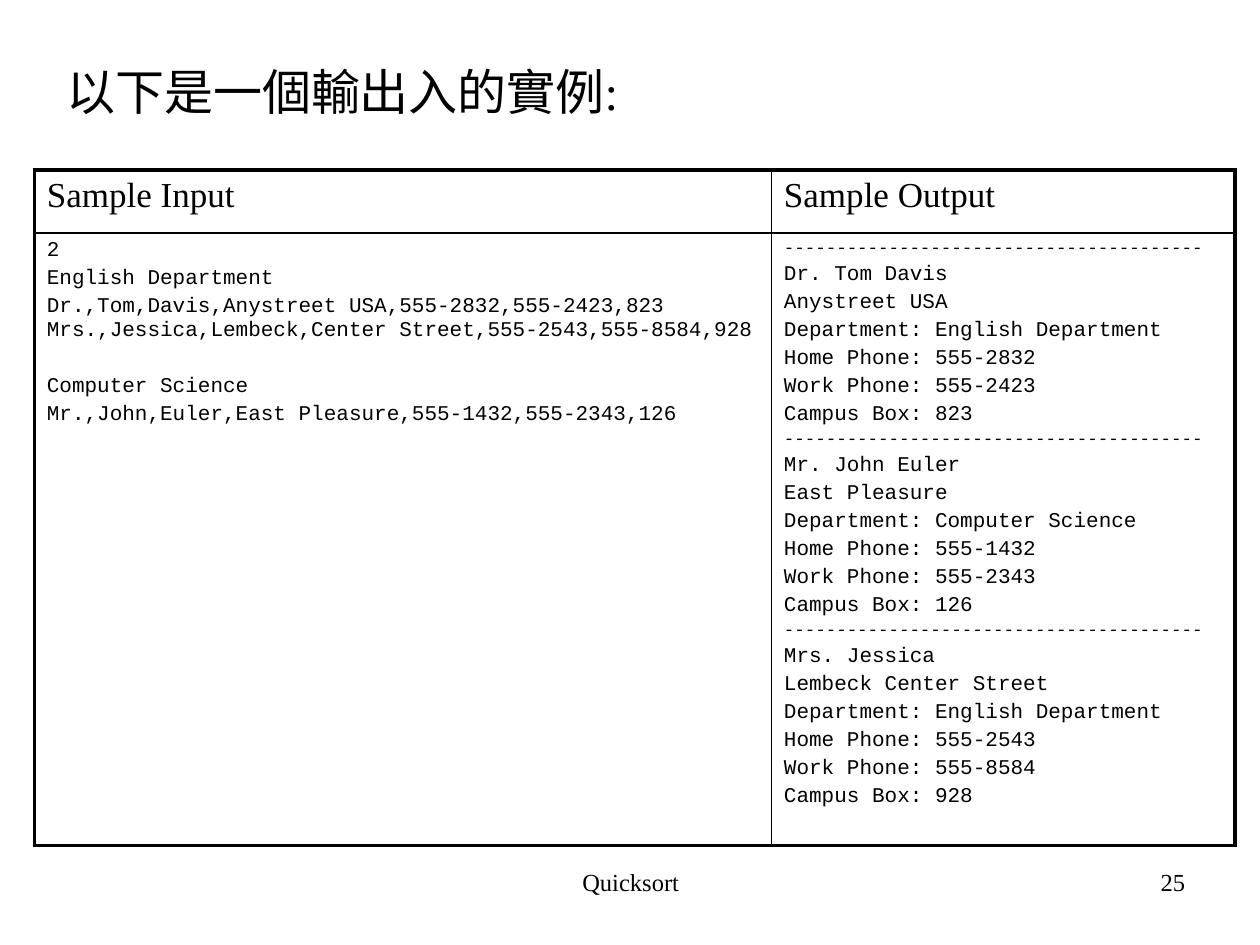
from typing import NamedTuple

from pptx import Presentation
from pptx.dml.color import RGBColor
from pptx.enum.text import MSO_ANCHOR as Anchor, PP_ALIGN as Align
from pptx.oxml import parse_xml
from pptx.oxml.ns import nsdecls
from pptx.util import Cm, Pt

COLORS = {"ink": "000000", "paper": "FFFFFF"}
SERIF, MONO = "Times New Roman", "Courier New"
THIN, THICK = 1, 2.25
SPACE_RATIO = 0.2
RULE = "-" * 40
COLUMN_WIDTHS = (14.86, 9.35)
ROW_HEIGHTS = (1.27, 12.22)


class Line(NamedTuple):
    text: str
    size: float = 12
    font: str = MONO
    align: Align = Align.LEFT
    hanging: float = 0
    extra_space: float = 0


class Box(NamedTuple):
    left: float
    top: float
    width: float
    height: float
    line: Line


class Person(NamedTuple):
    name: str
    address: str
    department: str
    home: str
    work: str
    campus_box: int


BOXES = (
    Box(8.69, 17.35, 8.05, 1.32, Line("Quicksort", 14, SERIF, Align.CENTER)),
    Box(18.21, 17.35, 5.93, 1.32, Line("25", 14, SERIF, Align.RIGHT)),
    Box(1.09, 1.12, 22.86, 12.57, Line("以下是一個輸出入的實例:", 28, SERIF, hanging=0.97)),
)
PEOPLE = (
    Person("Dr. Tom Davis", "Anystreet USA", "English Department", "555-2832", "555-2423", 823),
    Person("Mr. John Euler", "East Pleasure", "Computer Science", "555-1432", "555-2343", 126),
    Person("Mrs. Jessica", "Lembeck Center Street", "English Department", "555-2543", "555-8584", 928),
)
SAMPLE_INPUT = [
    Line("2"),
    Line("English Department"),
    Line("Dr.,Tom,Davis,Anystreet USA,555-2832,555-2423,823 "
         "Mrs.,Jessica,Lembeck,Center Street,555-2543,555-8584,928"),
    Line("Computer Science", extra_space=16),
    Line("Mr.,John,Euler,East Pleasure,555-1432,555-2343,126"),
]


def output_lines(person: Person) -> list[Line]:
    """Return the printed directory entry of one person."""
    details = (
        person.name,
        person.address,
        f"Department: {person.department}",
        f"Home Phone: {person.home}",
        f"Work Phone: {person.work}",
        f"Campus Box: {person.campus_box}",
    )
    return [Line(RULE, 10)] + [Line(detail) for detail in details]


def set_all(target, values: dict) -> None:
    """Set every attribute named in values on target."""
    for name, value in values.items():
        setattr(target, name, value)


def write_lines(text_frame, lines: list[Line]) -> None:
    """Write one paragraph per line, spaced in proportion to its size."""
    for index, line in enumerate(lines):
        paragraph = text_frame.add_paragraph() if index else text_frame.paragraphs[0]
        paragraph.alignment = line.align
        if index:
            paragraph.space_before = Pt(line.size * SPACE_RATIO + line.extra_space)
        if line.hanging:
            properties = paragraph._p.get_or_add_pPr()
            properties.set("marL", str(Cm(line.hanging)))
            properties.set("indent", str(-Cm(line.hanging)))
        run = paragraph.add_run()
        run.text = line.text
        set_all(run.font, {"name": line.font, "size": Pt(line.size), "bold": False})
        run.font.color.rgb = RGBColor.from_string(COLORS["ink"])


def add_box(slide, box: Box) -> None:
    """Add a wrapped text box."""
    shape = slide.shapes.add_textbox(*map(Cm, box[:4]))
    set_all(shape.text_frame, {"word_wrap": True, "vertical_anchor": Anchor.TOP})
    write_lines(shape.text_frame, [box.line])


def set_borders(cell, widths: dict[str, float]) -> None:
    """Draw solid borders of the given point widths around a cell."""
    properties = cell._tc.get_or_add_tcPr()
    for side, width in widths.items():
        properties.append(parse_xml(
            f'<a:ln{side} {nsdecls("a")} w="{Pt(width)}"><a:solidFill>'
            f'<a:srgbClr val="{COLORS["ink"]}"/></a:solidFill></a:ln{side}>'))


def add_sample_table(slide, rows: list[list[list[Line]]]) -> None:
    """Add the table with a thick frame and thin inner lines."""
    row_count, column_count = len(ROW_HEIGHTS), len(COLUMN_WIDTHS)
    table = slide.shapes.add_table(
        row_count, column_count, Cm(0.69), Cm(3.43),
        Cm(sum(COLUMN_WIDTHS)), Cm(sum(ROW_HEIGHTS))).table
    set_all(table, {"first_row": False, "horz_banding": False})
    for column, width in zip(table.columns, COLUMN_WIDTHS):
        column.width = Cm(width)
    for row, height in zip(table.rows, ROW_HEIGHTS):
        row.height = Cm(height)
    for row_index, row in enumerate(rows):
        for column_index, lines in enumerate(row):
            cell = table.cell(row_index, column_index)
            outer = {
                "L": column_index == 0,
                "R": column_index == column_count - 1,
                "T": row_index == 0,
                "B": row_index == row_count - 1,
            }
            set_borders(cell, {side: THICK if edge else THIN for side, edge in outer.items()})
            cell.fill.solid()
            cell.fill.fore_color.rgb = RGBColor.from_string(COLORS["paper"])
            cell.vertical_anchor = Anchor.TOP
            write_lines(cell.text_frame, lines)


def main() -> None:
    """Build and save the presentation."""
    presentation = Presentation()
    set_all(presentation, {"slide_width": Cm(25.4), "slide_height": Cm(19.05)})
    slide = presentation.slides.add_slide(presentation.slide_layouts[6])
    for box in BOXES:
        add_box(slide, box)
    headings = [[Line(f"Sample {name}", 20, SERIF)] for name in ("Input", "Output")]
    sample_output = [line for person in PEOPLE for line in output_lines(person)]
    add_sample_table(slide, [headings, [SAMPLE_INPUT, sample_output]])
    presentation.save("out.pptx")


if __name__ == "__main__":
    main()
